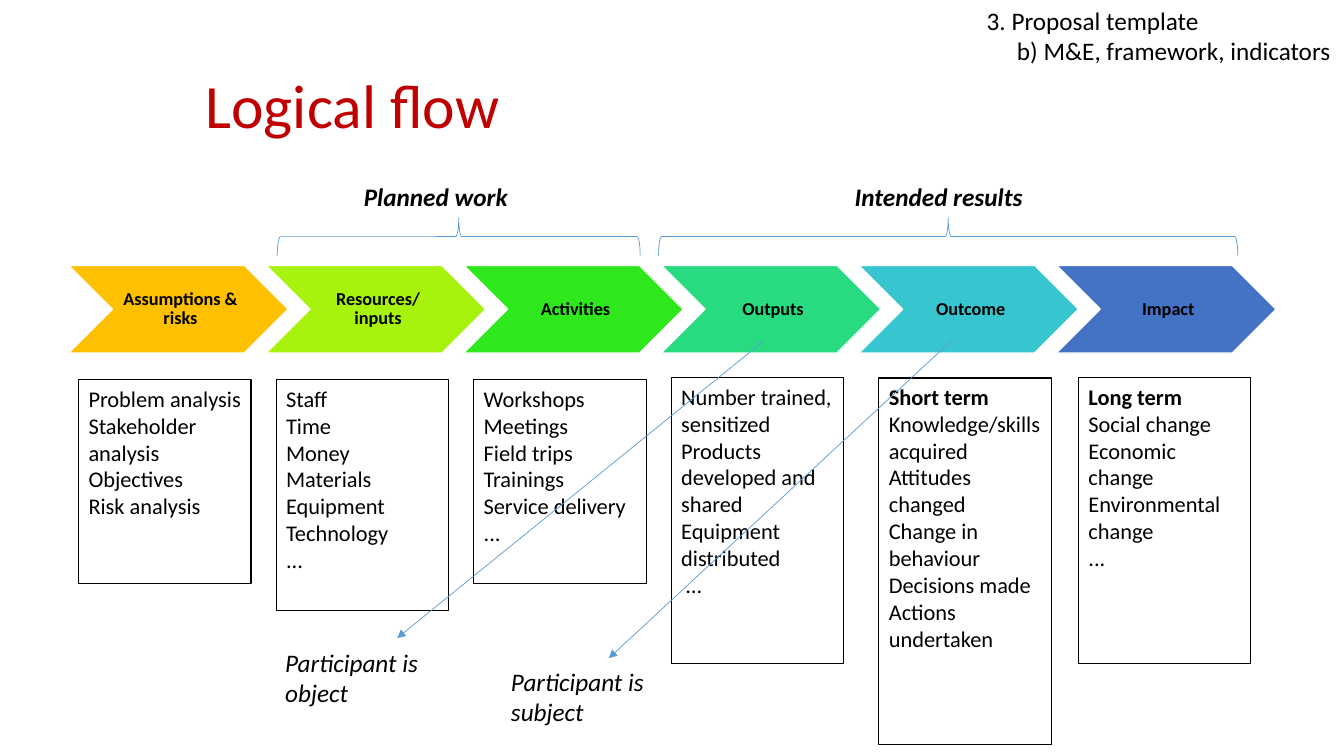
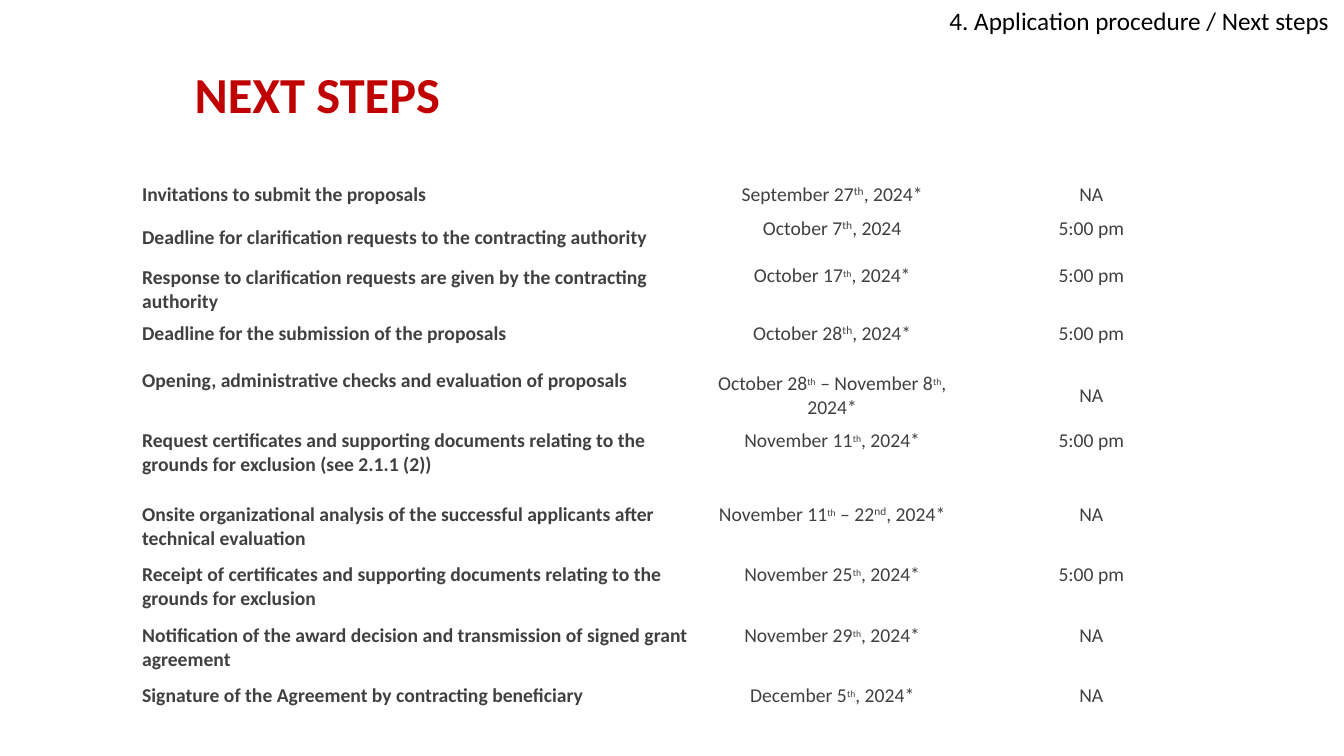
import pptx
import pptx.dml.color
import pptx.enum.shapes
import pptx.enum.text
import pptx.oxml.ns
import pptx.util
from lxml import etree

SHAPE = pptx.enum.shapes.MSO_SHAPE
ALIGN = pptx.enum.text.PP_ALIGN
ANCHOR = pptx.enum.text.MSO_ANCHOR
TOP, MIDDLE = ANCHOR.TOP, ANCHOR.MIDDLE
qn = pptx.oxml.ns.qn

SLIDE_WIDTH = pptx.util.Inches(13.33)
SLIDE_HEIGHT = pptx.util.Inches(7.5)

COLORS = {
    "title": "C00000",
    "text": "000000",
    "table": "404040",
    "accent": "5B9BD5",
    "white": "FFFFFF",
    "amber": "FFC000",
    "lime": "A7F30E",
    "green": "2EE71C",
    "mint": "29DB80",
    "teal": "37C6CF",
    "blue": "4472C4",
}

BODY = {"name": "Calibri", "size": pptx.util.Pt(16), "bold": False, "italic": False}
BOLD = BODY | {"bold": True}
CORNER = BODY | {"size": pptx.util.Pt(18)}
NOTE = CORNER | {"italic": True}
GROUP = NOTE | {"bold": True}
STAGE = BOLD | {"size": pptx.util.Pt(13)}
CELL = BODY | {"size": pptx.util.Pt(14)}

STAGE_LEFT, STAGE_PITCH = 5.1, 14.7
LINE_HEIGHT, BOX_PADDING = 3.6, 1.73

STAGES = [
    ("Assumptions & risks", "amber", 0, 50.27, 7,
     ["Problem analysis", "Stakeholder analysis", "Objectives", "Risk analysis"]),
    ("Resources/inputs", "lime", 0, 50.27, 8,
     ["Staff", "Time", "Money", "Materials", "Equipment", "Technology", "..."]),
    ("Activities", "green", 0, 50.27, 7,
     ["Workshops", "Meetings", "Field trips", "Trainings", "Service delivery", "..."]),
    ("Outputs", "mint", 0, 50, 10,
     ["Number trained, sensitized", "Products developed and shared",
      "Equipment distributed", " …"]),
    ("Outcome", "teal", 0.75, 50, 13,
     ["Short term", "Knowledge/skills acquired", "Attitudes changed",
      "Change in behaviour", "Decisions made", "Actions undertaken"]),
    ("Impact", "blue", 0.9, 50, 10,
     ["Long term", "Social change", "Economic change", "Environmental change", "..."]),
]
HEADINGS = {"Short term", "Long term"}

TH, SMALL_TH, ND = ("th", 14), ("th", 12), ("nd", 14)
TABLE_COLUMNS = [42.08, 19.58, 18.98]
STEPS = [
    (4.53, TOP, TOP, "Invitations to submit the proposals",
     ["September 27", TH, ", 2024*"], "NA"),
    (6.27, MIDDLE, TOP, "Deadline for clarification requests to the contracting authority",
     ["October 7", TH, ", 2024"], "5:00 pm"),
    (7.6, MIDDLE, TOP,
     "Response to clarification requests are given by the contracting authority",
     ["October 17", SMALL_TH, ", 2024*"], "5:00 pm"),
    (6.27, TOP, TOP, "Deadline for the submission of the proposals",
     ["October 28", TH, ", 2024*"], "5:00 pm"),
    (8, TOP, MIDDLE, "Opening, administrative checks and evaluation of proposals",
     ["October 28", SMALL_TH, " – November 8", SMALL_TH, ", 2024*"], "NA"),
    (9.73, TOP, TOP,
     "Request certificates and supporting documents relating to the grounds for exclusion "
     "(see 2.1.1 (2))",
     ["November 11", SMALL_TH, ", 2024*"], "5:00 pm"),
    (8, TOP, TOP,
     "Onsite organizational analysis of the successful applicants after technical evaluation",
     ["November 11", SMALL_TH, " – 22", ND, ", 2024*"], "NA"),
    (8, TOP, TOP,
     "Receipt of certificates and supporting documents relating to the grounds for exclusion",
     ["November 25", SMALL_TH, ", 2024*"], "5:00 pm"),
    (8, TOP, TOP,
     "Notification of the award decision and transmission of signed grant agreement",
     ["November 29", SMALL_TH, ", 2024*"], "NA"),
    (6.27, TOP, TOP, "Signature of the Agreement by contracting beneficiary",
     ["December 5", SMALL_TH, ", 2024*"], "NA"),
]


def across(share):
    return pptx.util.Emu(int(SLIDE_WIDTH * share / 100))


def down(share):
    return pptx.util.Emu(int(SLIDE_HEIGHT * share / 100))


def region(left, top, width, height):
    return across(left), down(top), across(width), down(height)


def rgb(color):
    return pptx.dml.color.RGBColor.from_string(COLORS[color])


def apply_format(target, values):
    for name, value in values.items():
        setattr(target, name, value)


def margins(left, top, right, bottom):
    names = ("margin_left", "margin_top", "margin_right", "margin_bottom")
    return dict(zip(names, map(pptx.util.Inches, (left, top, right, bottom))))


def add_run(paragraph, text, font_format, color="text"):
    run = paragraph.add_run()
    run.text = text
    apply_format(run.font, font_format)
    run.font.color.rgb = rgb(color)
    return run


def write_lines(text_frame, lines, font_format, alignment=ALIGN.LEFT):
    for index, line in enumerate(lines):
        paragraph = text_frame.add_paragraph() if index else text_frame.paragraphs[0]
        paragraph.alignment = alignment
        add_run(paragraph, line, BOLD if line in HEADINGS else font_format)


def add_title(slide, text, area, size, bold, anchor):
    title = slide.shapes.title
    apply_format(title, dict(zip(("left", "top", "width", "height"), area)))
    apply_format(title.text_frame, {
        "word_wrap": True,
        "vertical_anchor": anchor,
        "auto_size": pptx.enum.text.MSO_AUTO_SIZE.NONE,
    })
    paragraph = title.text_frame.paragraphs[0]
    apply_format(paragraph, {"alignment": ALIGN.LEFT, "line_spacing": 0.9})
    add_run(paragraph, text, BODY | {"size": pptx.util.Pt(size), "bold": bold}, "title")


def add_text(slide, area, lines, font_format, wrap=True):
    box = slide.shapes.add_textbox(*area)
    box.text_frame.word_wrap = wrap
    write_lines(box.text_frame, lines, font_format)
    return box


def add_outline(slide, kind, area, line_color, line_width, fill=None):
    shape = slide.shapes.add_shape(kind, *area)
    shape.shadow.inherit = False
    if fill:
        shape.fill.solid()
        shape.fill.fore_color.rgb = rgb(fill)
    else:
        shape.fill.background()
    shape.line.color.rgb = rgb(line_color)
    shape.line.width = pptx.util.Pt(line_width)
    return shape


def add_chevron(slide, area, text, fill):
    chevron = add_outline(slide, SHAPE.CHEVRON, area, "white", 1, fill)
    frame_format = {"word_wrap": True, "vertical_anchor": MIDDLE}
    apply_format(chevron.text_frame, frame_format | margins(0.06, 0.02, 0.02, 0.02))
    write_lines(chevron.text_frame, [text], STAGE, ALIGN.CENTER)
    chevron.text_frame.paragraphs[0].line_spacing = 0.9


def add_list_box(slide, area, lines):
    box = add_outline(slide, SHAPE.RECTANGLE, area, "text", 0.75)
    apply_format(box.text_frame, {"word_wrap": True, "vertical_anchor": TOP})
    write_lines(box.text_frame, lines, BODY)


def add_brace(slide, area):
    left, top, span, depth = area
    turned = (left + (span - depth) // 2, top - (span - depth) // 2, depth, span)
    brace = add_outline(slide, SHAPE.LEFT_BRACE, turned, "accent", 0.5)
    brace.rotation = 90


def add_arrow(slide, start, end):
    connector = slide.shapes.add_connector(
        pptx.enum.shapes.MSO_CONNECTOR.STRAIGHT,
        across(start[0]), down(start[1]), across(end[0]), down(end[1]))
    connector.line.color.rgb = rgb("accent")
    connector.line.width = pptx.util.Pt(0.5)
    properties = connector._element.spPr
    etree.SubElement(properties.find(qn("a:ln")), qn("a:tailEnd"), type="triangle")
    etree.SubElement(properties, qn("a:effectLst"))


def add_borders(cell, color):
    properties = cell._tc.get_or_add_tcPr()
    for side in ("lnL", "lnR", "lnT", "lnB"):
        border = etree.SubElement(properties, qn("a:" + side), w=str(pptx.util.Pt(0.5)))
        fill = etree.SubElement(border, qn("a:solidFill"))
        etree.SubElement(fill, qn("a:srgbClr"), val=COLORS[color])


def fill_cell(cell, parts, anchor, is_label):
    add_borders(cell, "white")
    if is_label:
        cell.fill.solid()
        cell.fill.fore_color.rgb = rgb("white")
    else:
        cell.fill.background()
    apply_format(cell, {"vertical_anchor": anchor} | margins(0.07, 0.03, 0.07, 0.03))
    paragraph = cell.text_frame.paragraphs[0]
    paragraph.alignment = ALIGN.LEFT if is_label else ALIGN.CENTER
    for part in parts:
        if isinstance(part, tuple):
            suffix, size = part
            run = add_run(paragraph, suffix, CELL | {"size": pptx.util.Pt(size)}, "table")
            run._r.get_or_add_rPr().set("baseline", "30000")
        else:
            add_run(paragraph, part, CELL | {"bold": is_label}, "table")


def add_schedule(slide, left, top):
    heights = [step[0] for step in STEPS]
    area = region(left, top, sum(TABLE_COLUMNS), sum(heights))
    table = slide.shapes.add_table(len(STEPS), len(TABLE_COLUMNS), *area).table
    apply_format(table, {"first_row": False, "horz_banding": False})
    for column, width in zip(table.columns, TABLE_COLUMNS):
        column.width = across(width)
    for row, (height, label_anchor, detail_anchor, label, date, hour) in zip(table.rows, STEPS):
        row.height = down(height)
        label_cell, date_cell, hour_cell = row.cells
        fill_cell(label_cell, [label], label_anchor, True)
        fill_cell(date_cell, date, detail_anchor, False)
        fill_cell(hour_cell, [hour], detail_anchor, False)


def build_logical_flow(slide):
    add_title(slide, "Logical flow", region(14.55, 4.67, 70.88, 19.33), 44, False, MIDDLE)
    for index, (name, color, shift, top, line_count, items) in enumerate(STAGES):
        left = STAGE_LEFT + index * STAGE_PITCH
        add_chevron(slide, region(left, 35.1, 16.35, 11.6), name, color)
        height = BOX_PADDING + line_count * LINE_HEIGHT
        add_list_box(slide, region(left + 0.75 + shift, top, 12.83, height), items)
    for left, span, label_left, label in [
        (20.63, 27, 26.33, "Planned work"),
        (49, 43.1, 62.85, "Intended results"),
    ]:
        add_brace(slide, region(left, 28.8, span, 0)[:3] + (down(5),))
        add_text(slide, region(label_left, 23.33, 15.45, 5.47), [label], GROUP)
    for start, end, note_left, note_top, note in [
        ((56.85, 45.07), (29.55, 84.4), 20.48, 84.93, "Participant is object"),
        ((70.8, 45.07), (45.3, 87.07), 37.28, 87.47, "Participant is subject"),
    ]:
        add_arrow(slide, start, end)
        add_text(slide, region(note_left, note_top, 15.45, 9.47), [note], NOTE)
    corner = add_text(slide, region(72.68, 0, 27.3, 9.47),
                      ["3. Proposal template", "b) M&E, framework, indicators"], CORNER, False)
    indent = str(pptx.util.Inches(0.3))
    corner.text_frame.paragraphs[1]._p.get_or_add_pPr().set("marL", indent)


def build_next_steps(slide):
    add_title(slide, "NEXT STEPS", region(13.73, 8.53, 60.75, 16.67), 36, True, TOP)
    add_schedule(slide, 10.05, 23.73)
    add_text(slide, region(69.9, 0, 30.08, 5.33),
             ["4. Application procedure / Next steps"], CORNER, False)


def main():
    presentation = pptx.Presentation()
    apply_format(presentation, {"slide_width": SLIDE_WIDTH, "slide_height": SLIDE_HEIGHT})
    title_only = presentation.slide_layouts[5]
    for build in (build_logical_flow, build_next_steps):
        build(presentation.slides.add_slide(title_only))
    presentation.save("out.pptx")


if __name__ == "__main__":
    main()
